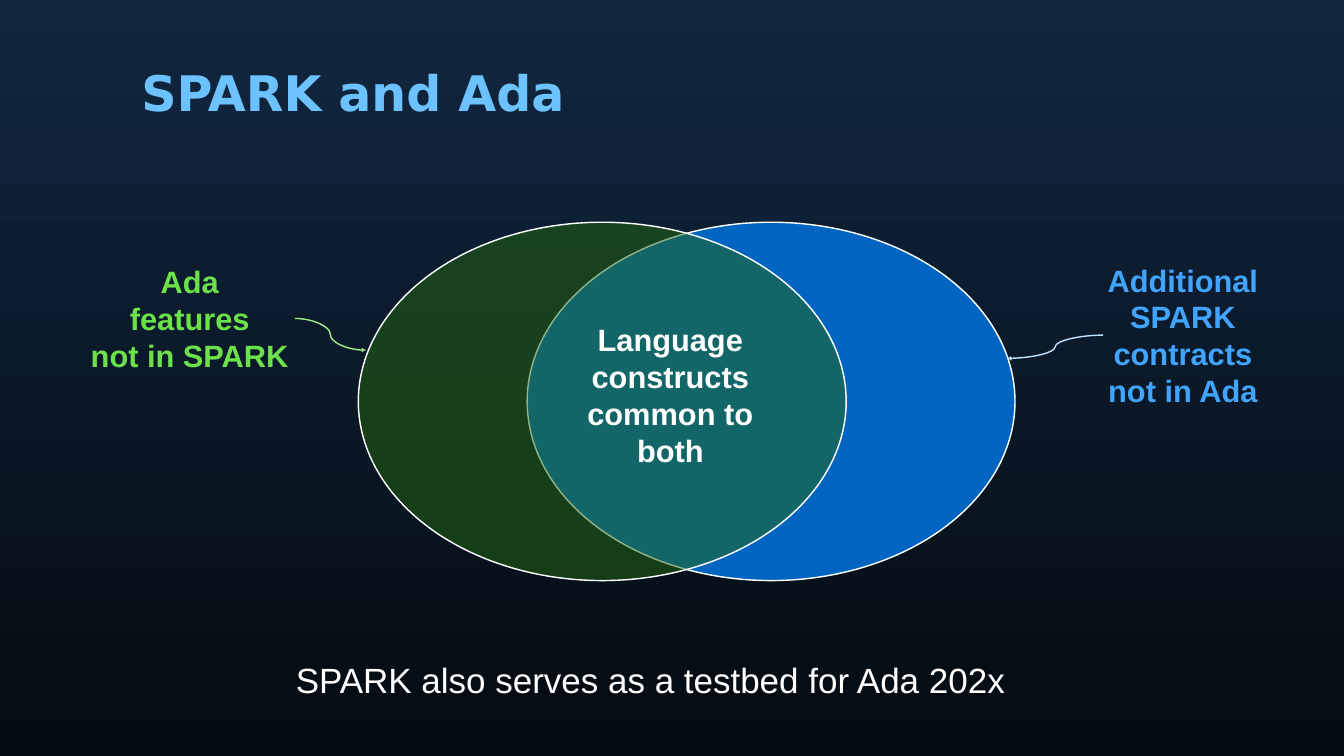
import pptx
import pptx.util
import pptx.dml.color
import pptx.enum.shapes
import pptx.enum.text
import pptx.oxml
import pptx.oxml.ns

Cm, Pt = pptx.util.Cm, pptx.util.Pt
RGB = pptx.dml.color.RGBColor
Align = pptx.enum.text.PP_ALIGN
Anchor = pptx.enum.text.MSO_ANCHOR
Fit = pptx.enum.text.MSO_AUTO_SIZE
Kind = pptx.enum.shapes.MSO_SHAPE
Link = pptx.enum.shapes.MSO_CONNECTOR
NS = 'xmlns:a="http://schemas.openxmlformats.org/drawingml/2006/main"'

TOP, BASE = RGB(0x11, 0x27, 0x40), RGB(0x04, 0x0B, 0x11)
WHITE, SKY = RGB(0xFF, 0xFF, 0xFF), RGB(0x6B, 0xC2, 0xFF)
BLUE, AZURE, PALE = RGB(0x00, 0x65, 0xC1), RGB(0x41, 0xA4, 0xFF), RGB(0xC0, 0xE1, 0xFF)
GREEN, LIME, MINT = RGB(0x24, 0x68, 0x10), RGB(0x6C, 0xE2, 0x4A), RGB(0x9D, 0xEC, 0x86)

SIZE = 67.74, 38.1
TITLE = "SPARK and Ada", (6.99, 2.51, 53.77, 3.99)
OVAL = 11.2, 24.59, 18.06
SETS = [
    dict(left=26.57, fill=BLUE, alpha=100, text=["Additional", "SPARK", "contracts", "not in Ada"],
         box=(55.6, 12.93, 8.05, 7.92), ink=AZURE, arrow=(55.6, 16.89, 50.77, 18.06), line=PALE),
    dict(left=18.06, fill=GREEN, alpha=50, text=["Ada", "features", "not in SPARK"],
         box=(4.27, 13.03, 10.59, 6.05), ink=LIME, arrow=(14.86, 16.05, 18.44, 17.65), line=MINT),
]
SHARED = ["Language constructs common to both"], (28.19, 16.05, 11.2, 7.77)
NOTE = ["SPARK also serves as a testbed for Ada 202x"], (14.66, 33.05, 36.8, 2.39)

LABEL = dict(name="Arial", size=Pt(44), bold=True)
HEAD = dict(name="DejaVu Sans", size=Pt(70), bold=True)
PLAIN = dict(name="Arial", size=Pt(50), bold=False)


def apply(item, values):
    for key, value in values.items():
        setattr(item, key, value)


def inset(frame, side, edge):
    apply(frame, dict(margin_left=Cm(side), margin_right=Cm(side),
                      margin_top=Cm(edge), margin_bottom=Cm(edge)))


def write(frame, lines, style, ink, align):
    for i, line in enumerate(lines):
        para = frame.add_paragraph() if i else frame.paragraphs[0]
        para.text = line
        para.alignment = align
        font = para.runs[0].font
        apply(font, style)
        font.color.rgb = ink


def add_text(slide, lines, box, style, ink, align, wrap=False):
    frame = slide.shapes.add_textbox(*map(Cm, box)).text_frame
    apply(frame, dict(word_wrap=wrap, auto_size=Fit.SHAPE_TO_FIT_TEXT))
    write(frame, lines, style, ink, align)
    return frame


def add_oval(slide, left, fill, alpha):
    top, width, height = OVAL
    oval = slide.shapes.add_shape(Kind.OVAL, Cm(left), Cm(top), Cm(width), Cm(height))
    oval.shadow.inherit = False
    oval.fill.solid()
    oval.fill.fore_color.rgb = fill
    oval.line.color.rgb = WHITE
    oval.line.width = Pt(2)
    if alpha < 100:
        tint = oval.fill._xPr.find(".//" + pptx.oxml.ns.qn("a:srgbClr"))
        tint.append(pptx.oxml.parse_xml(f'<a:alpha {NS} val="{alpha * 1000}"/>'))


def add_arrow(slide, ends, color):
    arrow = slide.shapes.add_connector(Link.CURVE, *map(Cm, ends))
    arrow.line.color.rgb = color
    arrow.line.width = Pt(2)
    arrow.line._get_or_add_ln().append(pptx.oxml.parse_xml(f'<a:tailEnd {NS} type="triangle"/>'))
    arrow._element.spPr.append(pptx.oxml.parse_xml(f"<a:effectLst {NS}/>"))


def main():
    deck = pptx.Presentation()
    deck.slide_width, deck.slide_height = map(Cm, SIZE)
    slide = deck.slides.add_slide(deck.slide_layouts[5])

    back = slide.background.fill
    back.gradient()
    back.gradient_angle = 270
    for stop, color, place in zip(back.gradient_stops, (TOP, BASE), (0, 1)):
        stop.color.rgb = color
        stop.position = place

    text, box = TITLE
    title = slide.shapes.title
    apply(title, dict(zip(("left", "top", "width", "height"), map(Cm, box))))
    frame = title.text_frame
    apply(frame, dict(word_wrap=True, auto_size=Fit.NONE, vertical_anchor=Anchor.MIDDLE))
    inset(frame, 0.13, 0.13)
    write(frame, [text], HEAD, SKY, Align.LEFT)
    frame.paragraphs[0].line_spacing = 1.1

    for part in SETS:
        add_oval(slide, part["left"], part["fill"], part["alpha"])
        frame = add_text(slide, part["text"], part["box"], LABEL, part["ink"], Align.CENTER)
        frame.vertical_anchor = Anchor.MIDDLE
        inset(frame, 0.2, 0.2)
        add_arrow(slide, part["arrow"], part["line"])

    add_text(slide, *SHARED, LABEL, WHITE, Align.CENTER, wrap=True)
    add_text(slide, *NOTE, PLAIN, WHITE, Align.LEFT)
    deck.save("out.pptx")


if __name__ == "__main__":
    main()
